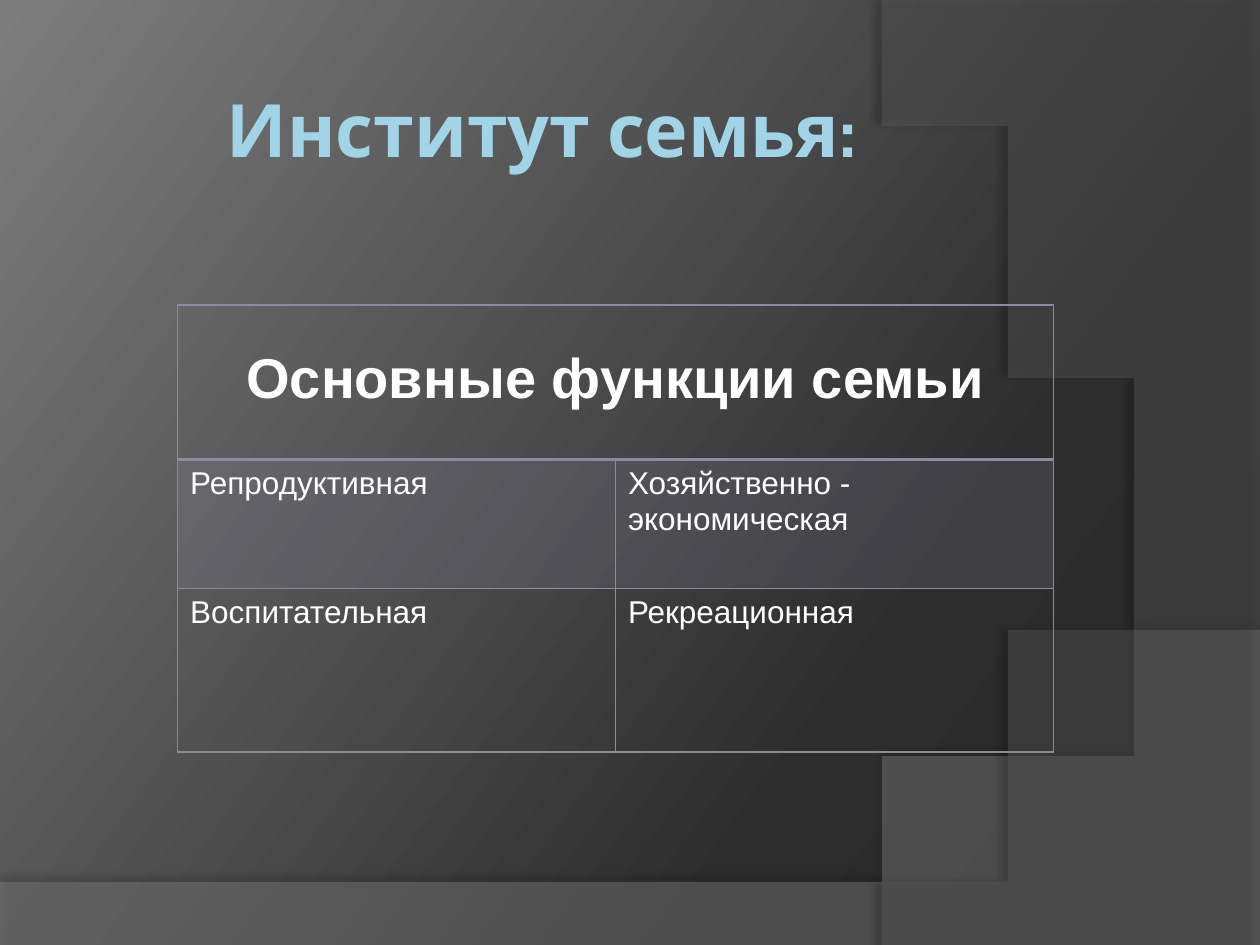
import copy
from dataclasses import dataclass

import pptx
import pptx.dml.color
import pptx.enum.text
import pptx.oxml
import pptx.oxml.ns
import pptx.oxml.xmlchemy
import pptx.util
from pptx.util import Inches

Point = tuple[float, float]
ALIGN = pptx.enum.text.PP_ALIGN
ANCHOR = pptx.enum.text.MSO_ANCHOR
qn = pptx.oxml.ns.qn
NS = pptx.oxml.ns.nsdecls("a")
LAVENDER = "8D89A4"
CURVE_STEPS = 60


@dataclass
class Wave:
    """A translucent area: straight corners, then one Bezier curve."""
    corners: list[Point]
    curve: list[Point]
    color: str
    opacity: int
    shadow_opacity: int
    shadow_distance: float
    shadow_angle: int


@dataclass
class Cell:
    row: int
    column: int
    text: str
    tinted: bool = False


WAVES = [
    Wave([(0, 7.05), (0, 7.51), (10, 7.51)],
         [(10, 5.2), (5.59, 7.29), (3.91, 7.19), (0, 7.05)],
         "7F7F7F", 45, 35, 3.5, 270),
    Wave([(10, 0.02), (10, 7.5)],
         [(7.03, 7.5), (8.91, 6.19), (9.47, 2.75), (6.68, 0)],
         "5E5E5E", 40, 45, 4, 180),
]
FUNCTIONS = [
    Cell(1, 0, "Репродуктивная", tinted=True),
    Cell(1, 1, "Хозяйственно - экономическая", tinted=True),
    Cell(2, 0, "Воспитательная"),
    Cell(2, 1, "Рекреационная"),
]


def rgb(color: str) -> pptx.dml.color.RGBColor:
    return pptx.dml.color.RGBColor.from_string(color)


def color_xml(color: str, opacity: int) -> str:
    return f'<a:srgbClr {NS} val="{color}"><a:alpha val="{opacity * 1000}"/></a:srgbClr>'


def fill_solid(fill, properties, color: str, opacity: int) -> None:
    fill.solid()
    fill.fore_color.rgb = rgb(color)
    solid = properties.find(qn("a:solidFill"))
    solid.replace(solid[0], pptx.oxml.parse_xml(color_xml(color, opacity)))


def write(frame, text: str, *, size: float, color: str = "FFFFFF", font: str = "Arial",
          bold: bool = False, align=ALIGN.LEFT) -> None:
    paragraph = frame.paragraphs[0]
    paragraph.alignment = align
    run = paragraph.add_run()
    run.text = text
    run.font.name = font
    run.font.size = pptx.util.Pt(size)
    run.font.bold = bold
    run.font.color.rgb = rgb(color)


def paint_background(slide) -> None:
    fill = slide.background.fill
    fill.gradient()
    fill.gradient_angle = 144
    stops = slide.element.find(".//" + qn("a:gsLst"))
    stops.append(copy.deepcopy(stops[-1]))
    shades = [(0, "242424"), (0.3, "2D2D2D"), (1, "7D7D7D")]
    for stop, (position, color) in zip(fill.gradient_stops, shades):
        stop.position = position
        stop.color.rgb = rgb(color)


def bezier(start: Point, pull_a: Point, pull_b: Point, end: Point) -> list[Point]:
    points = []
    for step in range(CURVE_STEPS + 1):
        t = step / CURVE_STEPS
        weights = ((1 - t) ** 3, 3 * t * (1 - t) ** 2, 3 * t * t * (1 - t), t ** 3)
        points.append(tuple(
            sum(w * p[axis] for w, p in zip(weights, (start, pull_a, pull_b, end)))
            for axis in (0, 1)))
    return points


def draw_wave(slide, wave: Wave) -> None:
    first, *rest = wave.corners + bezier(*wave.curve)
    builder = slide.shapes.build_freeform(*first, scale=Inches(1))
    builder.add_line_segments(rest, close=True)
    area = builder.convert_to_shape()
    properties = area.element.spPr
    fill_solid(area.fill, properties, wave.color, wave.opacity)
    area.line.fill.background()
    area.shadow.inherit = False
    properties.find(qn("a:effectLst")).append(pptx.oxml.parse_xml(
        f'<a:outerShdw {NS} blurRad="{pptx.util.Pt(4)}" '
        f'dist="{pptx.util.Pt(wave.shadow_distance)}" dir="{wave.shadow_angle * 60000}" '
        f'algn="ctr" rotWithShape="0">{color_xml("000000", wave.shadow_opacity)}'
        '</a:outerShdw>'))


def draw_title(slide) -> None:
    box = slide.shapes.add_textbox(Inches(1.75), Inches(0.67), Inches(7.75), Inches(1.05))
    frame = box.text_frame
    frame.word_wrap = True
    frame.margin_left = frame.margin_right = Inches(0.05)
    frame.margin_top = frame.margin_bottom = 0
    write(frame, "Институт семья:", size=42, color="A1D4E7", font="Cabin", bold=True)


def set_borders(cell, top: float = 1, bottom: float = 1) -> None:
    """Draw all four edges, with the widths in points."""
    properties = cell._tc.get_or_add_tcPr()
    for index, (side, width) in enumerate(
            [("L", 1), ("R", 1), ("T", top), ("B", bottom)]):
        properties.insert(index, pptx.oxml.parse_xml(
            f'<a:ln{side} {NS} w="{pptx.util.Pt(width)}"><a:solidFill>'
            f'{color_xml(LAVENDER, 100)}</a:solidFill></a:ln{side}>'))


def draw_functions_table(slide) -> None:
    table = slide.shapes.add_table(
        3, 2, Inches(1.41), Inches(2.42), Inches(6.95), Inches(3.55)).table
    table.first_row = table.horz_banding = False
    for row, height in zip(table.rows, (1.23, 1.02, 1.3)):
        row.height = Inches(height)

    heading = table.cell(0, 0)
    heading.merge(table.cell(0, 1))
    heading.vertical_anchor = ANCHOR.MIDDLE
    heading.margin_bottom = Inches(0.1)
    write(heading.text_frame, "Основные функции семьи", size=32, bold=True,
          align=ALIGN.CENTER)
    for column in (0, 1):
        header_cell = table.cell(0, column)
        header_cell.fill.background()
        set_borders(header_cell, bottom=2)

    for entry in FUNCTIONS:
        cell = table.cell(entry.row, entry.column)
        write(cell.text_frame, entry.text, size=18)
        if entry.tinted:
            fill_solid(cell.fill, cell._tc.get_or_add_tcPr(), LAVENDER, 20)
        else:
            cell.fill.background()
        set_borders(cell, top=2 if entry.row == 1 else 1)


def main() -> None:
    presentation = pptx.Presentation()
    presentation.slide_width = Inches(10)
    presentation.slide_height = Inches(7.5)
    slide = presentation.slides.add_slide(presentation.slide_layouts[6])
    paint_background(slide)
    for wave in WAVES:
        draw_wave(slide, wave)
    draw_title(slide)
    draw_functions_table(slide)
    presentation.save("out.pptx")


if __name__ == "__main__":
    main()
